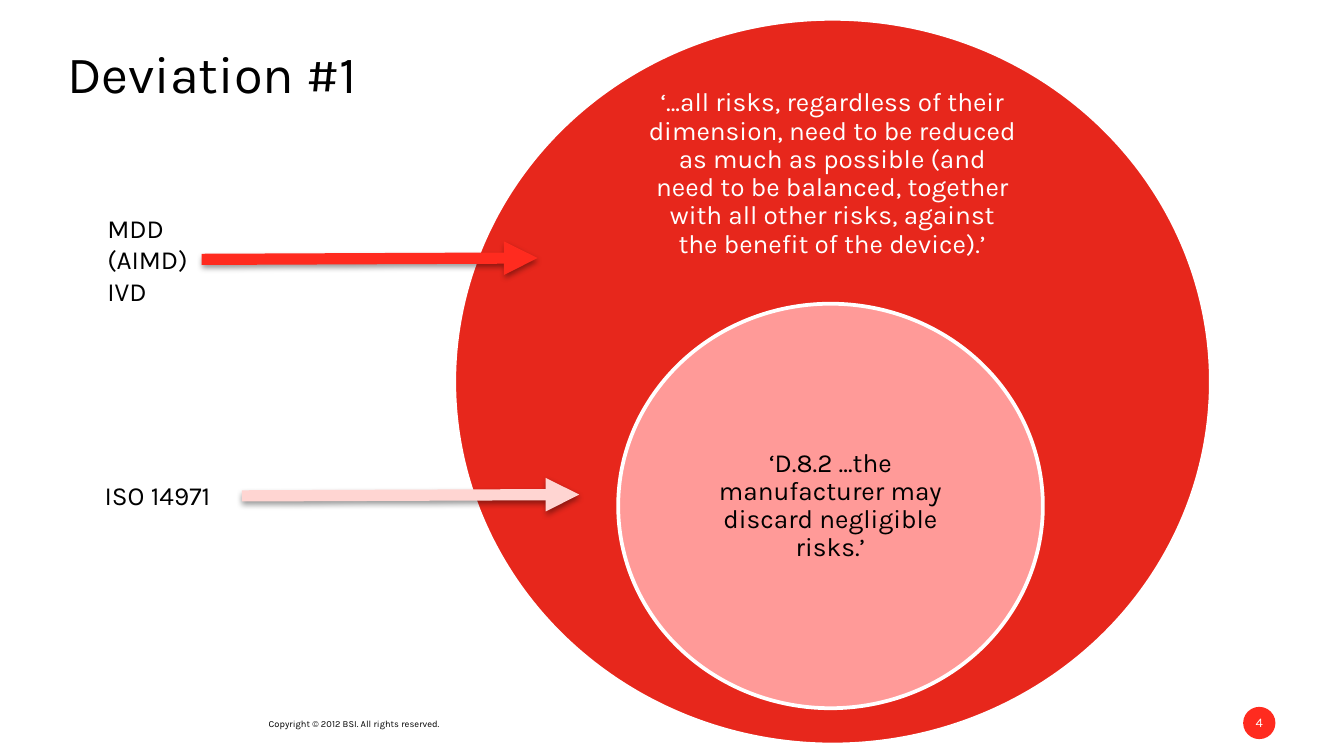
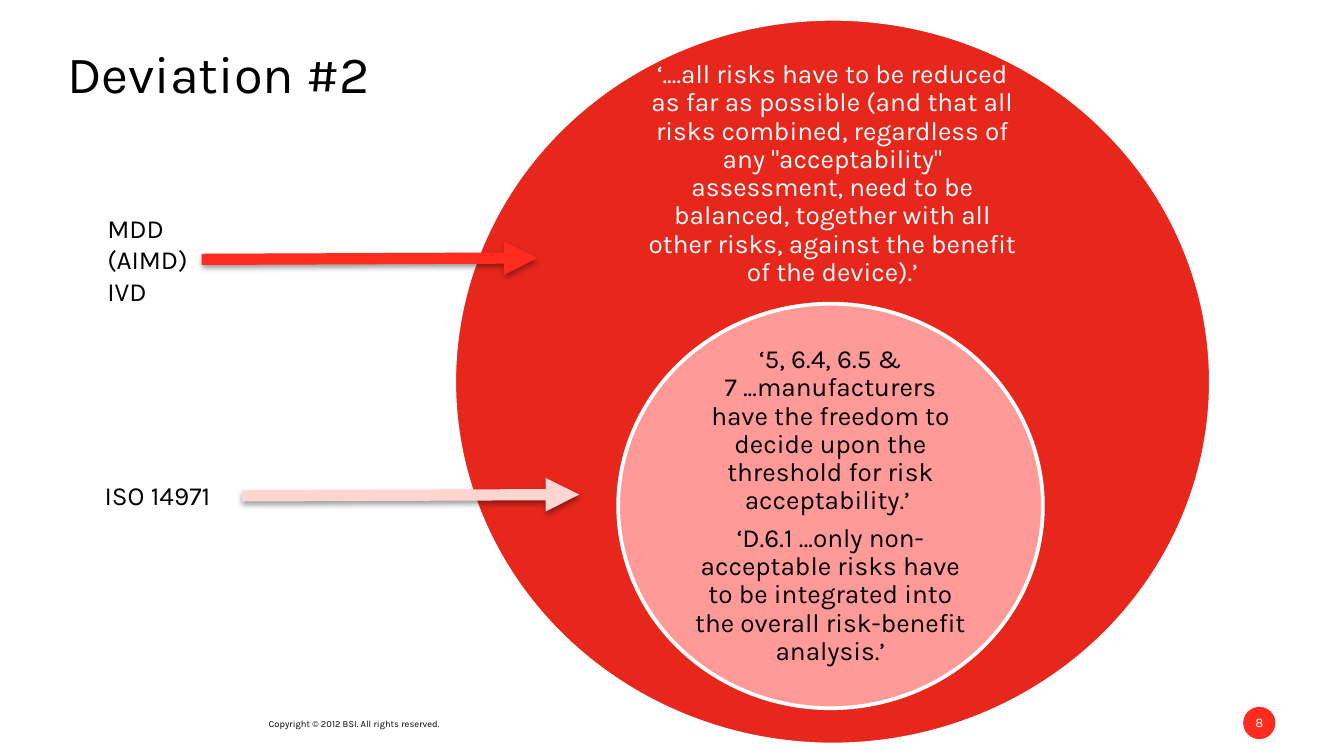
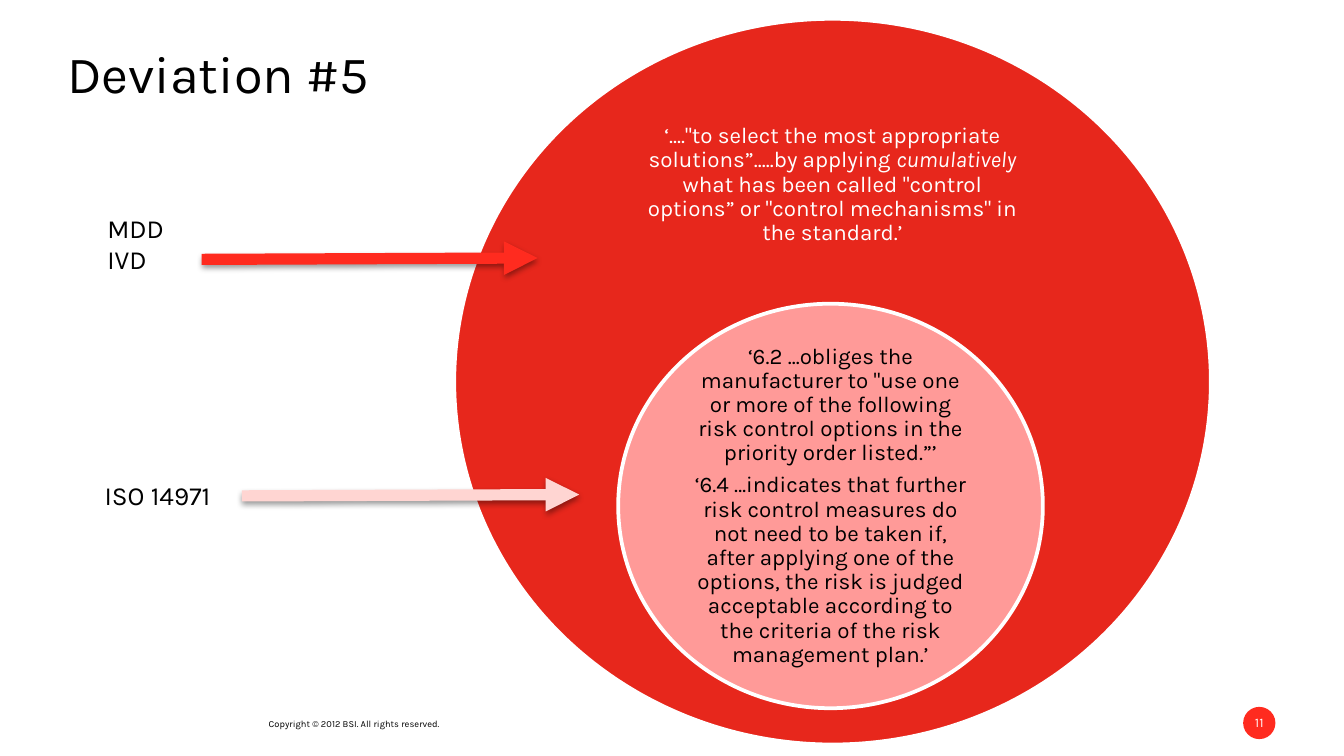
from dataclasses import dataclass
from typing import Any

import lxml.etree
import pptx
import pptx.dml.color
import pptx.enum.shapes
import pptx.enum.text
import pptx.oxml.ns
import pptx.util

Inches = pptx.util.Inches
Pt = pptx.util.Pt
RGBColor = pptx.dml.color.RGBColor
ALIGN = pptx.enum.text.PP_ALIGN
ANCHOR = pptx.enum.text.MSO_ANCHOR

BLACK = RGBColor(0x00, 0x00, 0x00)
WHITE = RGBColor(0xFF, 0xFF, 0xFF)
BRIGHT_RED = RGBColor(0xFF, 0x2B, 0x1F)
DEEP_RED = RGBColor(0xE7, 0x27, 0x1C)
ROSE = RGBColor(0xFF, 0x9A, 0x98)
PALE_ROSE = RGBColor(0xFF, 0xD5, 0xD2)

FONT = "Karla"
COPYRIGHT = "Copyright © 2012 BSI. All rights reserved."
TITLE_ONLY = 5
SLIDE_WIDTH = Inches(10)
SLIDE_HEIGHT = SLIDE_WIDTH * 9 // 16
PARAGRAPH_GAP = 0.35  # share of the text size


@dataclass(frozen=True)
class Area:
    left: float
    top: float
    width: float
    height: float

    def lengths(self) -> list[int]:
        return [Inches(value) for value in (self.left, self.top, self.width, self.height)]


@dataclass(frozen=True)
class Span:
    text: str
    italic: bool = False


Paragraph = list[Span]


@dataclass(frozen=True)
class Circle:
    area: Area
    fill: RGBColor
    line: RGBColor | None
    text_color: RGBColor


@dataclass(frozen=True)
class Margins:
    side: float = 0
    bottom: float = 0


@dataclass(frozen=True)
class Arrow:
    start: tuple[float, float]
    end: tuple[float, float]
    color: RGBColor


@dataclass(frozen=True)
class Deviation:
    title: str
    number: int
    directives: list[str]
    directives_area: Area
    directive_quote: list[Paragraph]
    directive_margins: Margins  # the bottom one lifts the quote above the inner circle
    standard_quote: list[Paragraph]
    quote_size: int


TITLE_AREA = Area(0.5, 0.31, 9, 0.39)
COPYRIGHT_AREA = Area(2, 5.34, 1.34, 0.09)
STANDARD_AREA = Area(0.68, 3.52, 1.12, 0.34)
THREE_LINES = Area(0.7, 1.53, 0.83, 0.81)
TWO_LINES = Area(0.7, 1.53, 0.62, 0.57)

DIRECTIVE_CIRCLE = Circle(Area(3.38, 0.14, 5.63, 5.4), DEEP_RED, WHITE, WHITE)
STANDARD_CIRCLE = Circle(Area(4.6, 2.26, 3.16, 3.01), ROSE, WHITE, BLACK)
NUMBER_CIRCLE = Circle(Area(9.25, 5.26, 0.24, 0.24), BRIGHT_RED, None, WHITE)
STANDARD_MARGINS = Margins(side=0.1)
ARROWS = [
    Arrow((1.8, 3.69), (4.31, 3.68), PALE_ROSE),
    Arrow((1.5, 1.93), (4, 1.92), BRIGHT_RED),
]

DEVIATIONS = [
    Deviation(
        "Deviation #1", 4, ["MDD", "(AIMD)", "IVD"], THREE_LINES,
        [[Span("‘...all risks, regardless of their dimension, need to be reduced as much "
               "as possible (and need to be balanced, together with all other risks, "
               "against the benefit of the device).’")]],
        Margins(0.62, 3.09),
        [[Span("‘D.8.2 ...the manufacturer may discard negligible risks.’")]],
        14,
    ),
    Deviation(
        "Deviation #2", 8, ["MDD", "(AIMD)", "IVD"], THREE_LINES,
        [[Span("‘....all risks have to be reduced as far as possible (and that all risks "
               'combined, regardless of any "acceptability" assessment, need to be '
               "balanced, together with all other risks, against the benefit of the "
               "device).’")]],
        Margins(0.62, 3.09),
        [[Span("‘5, 6.4, 6.5 & 7 ...manufacturers have the freedom to decide upon the "
               "threshold for risk acceptability.’ ")],
         [Span("‘D.6.1 …only non-acceptable risks have to be integrated into the overall "
               "risk-benefit analysis.’")]],
        14,
    ),
    Deviation(
        "Deviation #5", 11, ["MDD", "IVD"], TWO_LINES,
        [[Span('‘...."to select the most appropriate solutions”.....by applying '),
          Span("cumulatively", italic=True),
          Span(' what has been called "control options” or "control mechanisms" in the '
               "standard.’")]],
        Margins(0.6, 2.93),
        [[Span('‘6.2 ...obliges the manufacturer to "use one or more of the following risk '
               "control options in the priority order listed.”’")],
         [Span("‘6.4 …indicates that further risk control measures do not need to be taken "
               "if, after applying one of the options, the risk is judged acceptable "
               "according to the criteria of the risk management plan.’")]],
        12,
    ),
]


def apply_format(target: Any, values: dict[str, Any]) -> None:
    for name, value in values.items():
        setattr(target, name, value)


def plain(*lines: str) -> list[Paragraph]:
    return [[Span(line)] for line in lines]


def write_text(box: Any, paragraphs: list[Paragraph], size: int, color: RGBColor,
               para_format: dict[str, Any], gap: float = 0) -> None:
    frame = box.text_frame
    for index, spans in enumerate(paragraphs):
        para = frame.add_paragraph() if index else frame.paragraphs[0]
        apply_format(para, para_format)
        if index and gap:
            para.space_before = Pt(size * gap)
        for span in spans:
            run = para.add_run()
            run.text = span.text
            apply_format(run.font, {"name": FONT, "size": Pt(size), "italic": span.italic})
            run.font.color.rgb = color


def set_margins(box: Any, margins: Margins = Margins()) -> None:
    apply_format(box.text_frame, {
        "margin_left": Inches(margins.side), "margin_right": Inches(margins.side),
        "margin_top": 0, "margin_bottom": Inches(margins.bottom),
    })


def add_title(page: Any, text: str) -> None:
    title = page.shapes.title
    apply_format(title, dict(zip(("left", "top", "width", "height"), TITLE_AREA.lengths())))
    set_margins(title)
    apply_format(title.text_frame, {
        "vertical_anchor": ANCHOR.TOP, "auto_size": pptx.enum.text.MSO_AUTO_SIZE.NONE,
    })
    write_text(title, plain(text), 28, BLACK, {"alignment": ALIGN.LEFT})


def add_label(page: Any, area: Area, lines: list[str], size: int = 14) -> Any:
    box = page.shapes.add_textbox(*area.lengths())
    box.text_frame.word_wrap = False
    write_text(box, plain(*lines), size, BLACK, {"alignment": ALIGN.LEFT})
    return box


def add_circle(page: Any, circle: Circle, paragraphs: list[Paragraph], size: int,
               margins: Margins = Margins()) -> None:
    oval = page.shapes.add_shape(pptx.enum.shapes.MSO_SHAPE.OVAL, *circle.area.lengths())
    oval.shadow.inherit = False
    oval.fill.solid()
    oval.fill.fore_color.rgb = circle.fill
    if circle.line is None:
        oval.line.fill.background()
    else:
        oval.line.color.rgb = circle.line
        oval.line.width = Pt(2)
    set_margins(oval, margins)
    apply_format(oval.text_frame, {"word_wrap": True, "vertical_anchor": ANCHOR.MIDDLE})
    write_text(oval, paragraphs, size, circle.text_color,
               {"alignment": ALIGN.CENTER, "line_spacing": 0.9}, PARAGRAPH_GAP)


def add_child(parent: Any, tag: str, **attributes: str) -> Any:
    return lxml.etree.SubElement(parent, pptx.oxml.ns.qn(tag), attributes)


def add_arrow(page: Any, arrow: Arrow) -> None:
    """Draw a thick arrow with a soft shadow straight below it."""
    ends = [Inches(value) for value in arrow.start + arrow.end]
    connector = page.shapes.add_connector(pptx.enum.shapes.MSO_CONNECTOR.STRAIGHT, *ends)
    connector.line.color.rgb = arrow.color
    connector.line.width = Pt(6)
    properties = connector._element.spPr
    add_child(properties.find(pptx.oxml.ns.qn("a:ln")), "a:tailEnd", type="triangle")
    effects = add_child(properties, "a:effectLst")
    shadow = add_child(effects, "a:outerShdw", blurRad="40000", dist="20000",
                       dir="5400000", rotWithShape="0")
    add_child(add_child(shadow, "a:srgbClr", val=str(BLACK)), "a:alpha", val="38000")


def add_footer(page: Any, number: int) -> None:
    set_margins(add_label(page, COPYRIGHT_AREA, [COPYRIGHT], 5))
    add_circle(page, NUMBER_CIRCLE, plain(str(number)), 7)


def add_deviation(deck: Any, deviation: Deviation) -> None:
    page = deck.slides.add_slide(deck.slide_layouts[TITLE_ONLY])
    add_title(page, deviation.title)
    add_footer(page, deviation.number)
    add_circle(page, DIRECTIVE_CIRCLE, deviation.directive_quote, deviation.quote_size,
               deviation.directive_margins)
    add_circle(page, STANDARD_CIRCLE, deviation.standard_quote, deviation.quote_size,
               STANDARD_MARGINS)
    add_label(page, STANDARD_AREA, ["ISO 14971"])
    add_label(page, deviation.directives_area, deviation.directives)
    for arrow in ARROWS:
        add_arrow(page, arrow)


def main() -> None:
    deck = pptx.Presentation()
    apply_format(deck, {"slide_width": SLIDE_WIDTH, "slide_height": SLIDE_HEIGHT})
    for deviation in DEVIATIONS:
        add_deviation(deck, deviation)
    deck.save("out.pptx")


if __name__ == "__main__":
    main()
